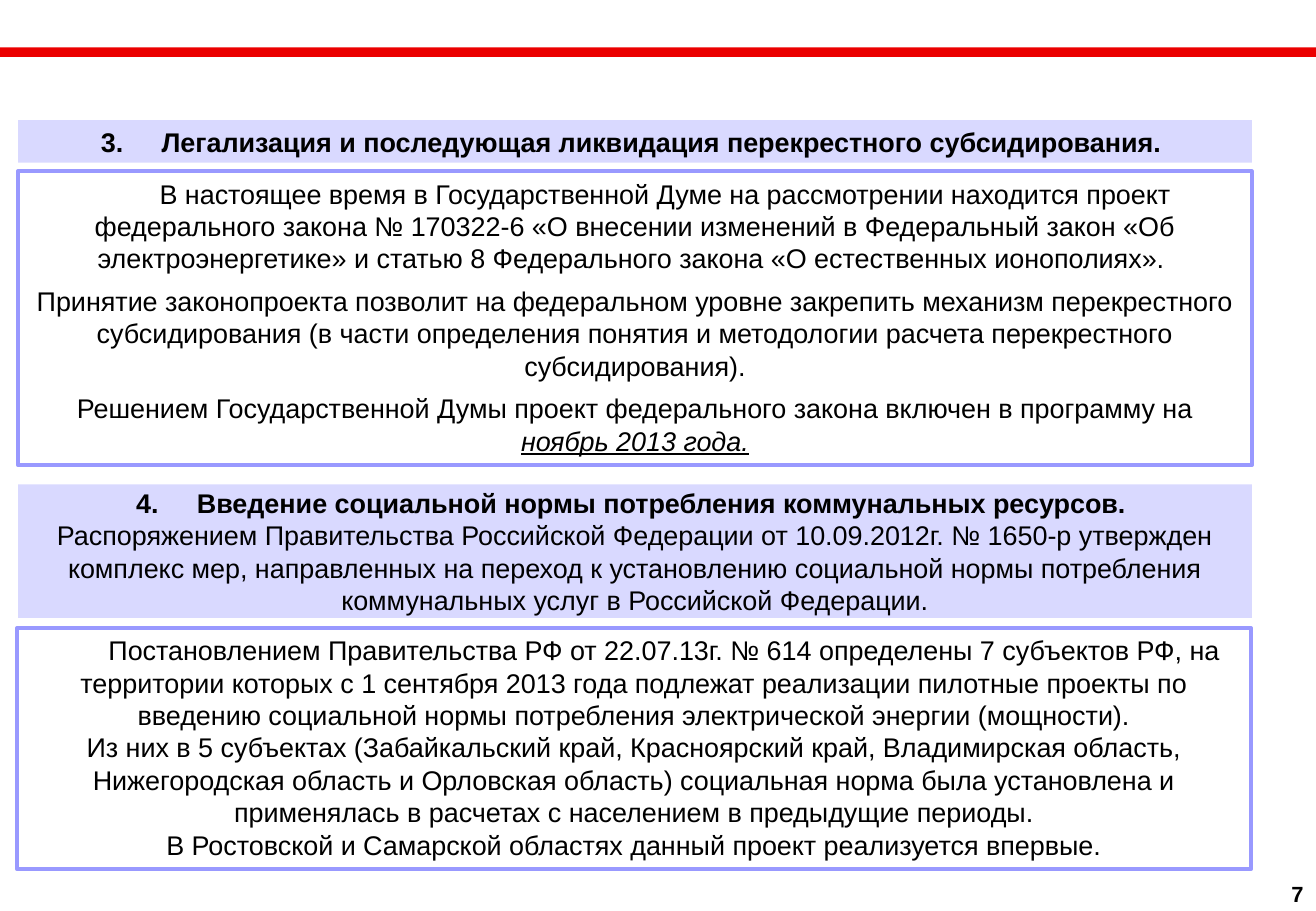
from lxml import etree
from pptx import Presentation
from pptx.dml.color import RGBColor
from pptx.enum.shapes import MSO_SHAPE
from pptx.enum.text import MSO_ANCHOR, MSO_AUTO_SIZE, PP_ALIGN
from pptx.oxml.ns import qn
from pptx.util import Cm, Pt

RECT = MSO_SHAPE.RECTANGLE
CENTER = PP_ALIGN.CENTER
TOP, MIDDLE = MSO_ANCHOR.TOP, MSO_ANCHOR.MIDDLE
FIXED, GROW = MSO_AUTO_SIZE.NONE, MSO_AUTO_SIZE.SHAPE_TO_FIT_TEXT
PLAIN = {"name": "Arial", "size": Pt(16), "bold": False}
BOLD = {**PLAIN, "bold": True}
DATE = {**PLAIN, "italic": True, "underline": True}
NUMBER = {**BOLD, "size": Pt(13)}


def rgb(value):
    return RGBColor.from_string(value)


def write(tf, paragraphs, start=None, gap=0):
    for i, runs in enumerate(paragraphs):
        p = tf.paragraphs[0] if i == 0 else tf.add_paragraph()
        p.alignment = CENTER
        if start and i == 0:
            pPr = p._p.get_or_add_pPr()
            pPr.set("marL", str(Cm(1.27)))
            pPr.set("indent", str(-Cm(1.27)))
            etree.SubElement(pPr, qn("a:buFont"), typeface="+mj-lt")
            etree.SubElement(pPr, qn("a:buAutoNum"), type="arabicPeriod", startAt=str(start))
        if gap and i < len(paragraphs) - 1:
            p.space_after = Pt(gap)
        for text, style in runs:
            r = p.add_run()
            r.text = text
            for key, value in style.items():
                setattr(r.font, key, value)
            r.font.color.rgb = rgb("000000")


prs = Presentation()
prs.slide_width, prs.slide_height = Cm(27.53), Cm(19.05)
s = prs.slides.add_slide(prs.slide_layouts[5])

bar = s.shapes.add_shape(RECT, 0, Cm(0.99), prs.slide_width, Cm(0.2))
bar.shadow.inherit = False
bar.fill.solid()
bar.fill.fore_color.rgb = rgb("EB0000")
bar.line.fill.background()

subsidy_title = [[("Легализация и последующая ликвидация перекрестного субсидирования. ", BOLD)]]
norm_title = [
    [("Введение социальной нормы потребления коммунальных ресурсов. ", BOLD)],
    [("Распоряжением Правительства Российской Федерации от 10.09.2012г. № 1650-р утвержден комплекс мер, направленных на переход к установлению социальной нормы потребления коммунальных услуг в Российской Федерации.", PLAIN)],
]
headings = [
    (s.shapes.title, 2.51, 0.89, 3, subsidy_title),
    (s.shapes.add_shape(RECT, 0, 0, 0, 0), 10.13, 2.79, 4, norm_title),
]
for sp, top, height, start, paragraphs in headings:
    sp.left, sp.top, sp.width, sp.height = Cm(0.38), Cm(top), Cm(25.81), Cm(height)
    sp.fill.solid()
    sp.fill.fore_color.rgb = rgb("D9D9FF")
    sp.line.fill.background()
    tf = sp.text_frame
    tf.word_wrap, tf.auto_size, tf.vertical_anchor = True, FIXED, MIDDLE
    write(tf, paragraphs, start=start)
headings[1][0].shadow.inherit = False

subsidy_text = [
    [("\tВ настоящее время в Государственной Думе на рассмотрении находится проект федерального закона № 170322-6 «О внесении изменений в Федеральный закон «Об электроэнергетике» и статью 8 Федерального закона «О естественных ионополиях». ", PLAIN)],
    [("Принятие законопроекта позволит на федеральном уровне закрепить механизм перекрестного субсидирования (в части определения понятия и методологии расчета перекрестного субсидирования).", PLAIN)],
    [("Решением Государственной Думы проект федерального закона включен в программу на ", PLAIN), ("ноябрь 2013 года.", DATE)],
]
norm_text = [
    [("\tПостановлением Правительства РФ от 22.07.13г. № 614 определены 7 субъектов РФ, на территории которых с 1 сентября 2013 года подлежат реализации пилотные проекты по введению социальной нормы потребления электрической энергии (мощности).", PLAIN)],
    [("Из них в 5 субъектах (Забайкальский край, Красноярский край, Владимирская область, Нижегородская область и Орловская область) социальная норма была установлена и применялась в расчетах с населением в предыдущие периоды.", PLAIN)],
    [("В Ростовской и Самарской областях данный проект реализуется впервые.", PLAIN)],
]
for left, top, height, gap, paragraphs in [
    (0.38, 3.58, 6.15, 6, subsidy_text),
    (0.36, 13.13, 5.05, 0, norm_text),
]:
    sp = s.shapes.add_shape(RECT, Cm(left), Cm(top), Cm(25.81), Cm(height))
    sp.shadow.inherit = False
    sp.fill.background()
    sp.line.color.rgb = rgb("9999FF")
    sp.line.width = Pt(2.25)
    tf = sp.text_frame
    tf.word_wrap, tf.auto_size, tf.vertical_anchor = True, GROW, TOP
    write(tf, paragraphs, gap=gap)

page = s.shapes.add_textbox(Cm(26.75), Cm(18.29), Cm(0.79), Cm(0.81))
page.text_frame.word_wrap = False
page.text_frame.auto_size = GROW
write(page.text_frame, [[("7", NUMBER)]])

prs.save("out.pptx")
